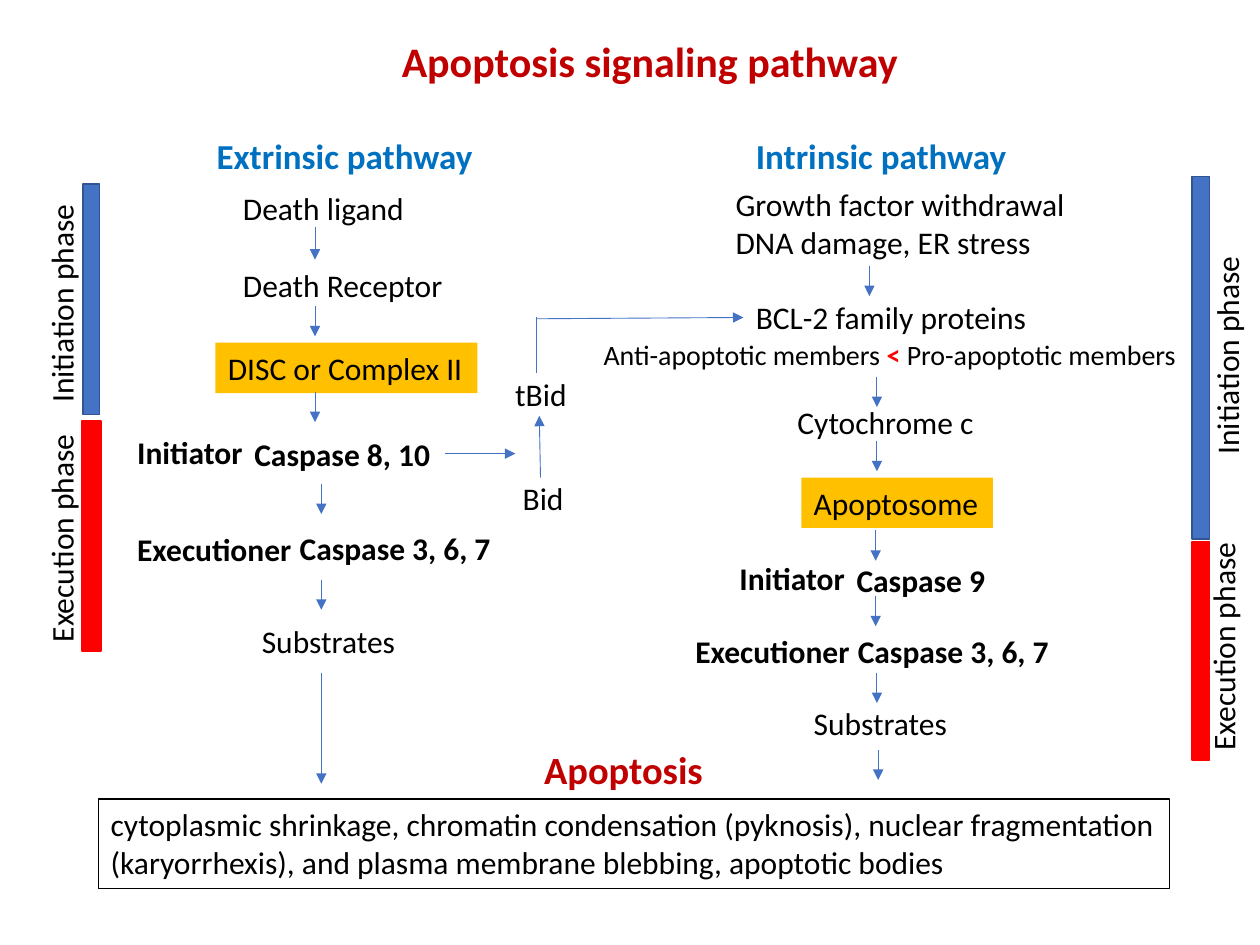
from typing import NamedTuple, Optional

from pptx import Presentation
from pptx.dml.color import RGBColor
from pptx.enum import shapes, text
from pptx.oxml import parse_xml
from pptx.oxml.ns import nsdecls, qn
from pptx.util import Inches, Pt

COLOURS = {
    "black": "000000", "title": "C00000", "heading": "0070C0", "blue": "4472C4",
    "navy": "325491", "red": "FF0000", "amber": "FFC000",
}


class Run(NamedTuple):
    words: str
    colour: str = "black"
    bold: bool = False


class Label(NamedTuple):
    words: str
    left: float
    top: float
    width: float
    height: float = 0.4
    size: int = 18
    colour: str = "black"
    bold: bool = False
    fill: Optional[str] = None
    outline: Optional[str] = None
    wrap: bool = False
    rotation: int = 0
    margin: Optional[float] = None
    runs: tuple = ()


class Arrow(NamedTuple):
    x: float
    y: float
    end_x: float
    end_y: float
    head: bool = True


class Bar(NamedTuple):
    left: float
    top: float
    width: float
    height: float
    fill: str
    outline: str


def rgb(name: str) -> RGBColor:
    """Return the named colour."""
    return RGBColor.from_string(COLOURS[name])


def down(x: float, y: float, length: float = 0.24) -> Arrow:
    """Describe an arrow pointing straight down."""
    return Arrow(x, y, x, y + length)


def draw_label(slide, label: Label):
    """Draw a text label, one paragraph per line of words."""
    box = slide.shapes.add_textbox(*map(Inches, label[1:5]))
    box.rotation = label.rotation
    if label.fill:
        box.fill.solid()
        box.fill.fore_color.rgb = rgb(label.fill)
    if label.outline:
        box.line.color.rgb = rgb(label.outline)
        box.line.width = Pt(0.75)
    frame = box.text_frame
    frame.word_wrap = label.wrap
    frame.auto_size = text.MSO_AUTO_SIZE.SHAPE_TO_FIT_TEXT
    if label.margin is not None:
        frame.margin_left = frame.margin_right = Inches(label.margin)
        frame.margin_top = frame.margin_bottom = Inches(label.margin)
    for index, line in enumerate(label.words.split("\n")):
        paragraph = frame.add_paragraph() if index else frame.paragraphs[0]
        for part in label.runs or (Run(line, label.colour, label.bold),):
            run = paragraph.add_run()
            run.text = part.words
            run.font.name = "Calibri"
            run.font.size = Pt(label.size)
            run.font.bold = part.bold
            run.font.color.rgb = rgb(part.colour)
    return box


def draw_arrow(slide, arrow: Arrow):
    """Draw a thin blue connector, with a head unless it is a plain line."""
    link = slide.shapes.add_connector(
        shapes.MSO_CONNECTOR.STRAIGHT, *map(Inches, arrow[:4]))
    link.line.color.rgb = rgb("blue")
    link.line.width = Pt(0.5)
    if arrow.head:
        link.line._get_or_add_ln().append(
            parse_xml(f'<a:tailEnd {nsdecls("a")} type="triangle"/>'))
    properties = link._element.find(qn("p:spPr"))
    properties.append(parse_xml(f'<a:effectLst {nsdecls("a")}/>'))
    return link


def draw_bar(slide, bar: Bar) -> None:
    """Draw the bar that spans one phase."""
    shape = slide.shapes.add_shape(
        shapes.MSO_SHAPE.RECTANGLE, *map(Inches, bar[:4]))
    shape.shadow.inherit = False
    shape.fill.solid()
    shape.fill.fore_color.rgb = rgb(bar.fill)
    shape.line.color.rgb = rgb(bar.outline)
    shape.line.width = Pt(1)


BALANCE = (Run("Anti-apoptotic members "), Run("<", "red", True),
           Run(" Pro-apoptotic members"))
OUTCOME = ("cytoplasmic shrinkage, chromatin condensation (pyknosis), nuclear "
           "fragmentation (karyorrhexis), and plasma membrane blebbing, "
           "apoptotic bodies")
CASPASE_8 = Label("Caspase 8, 10", 1.92, 3.4, 1.61, bold=True)
BCL_2 = Label("BCL-2 family proteins", 5.9, 2.32, 2.37)

LABELS = [
    Label("Apoptosis signaling pathway", 3.09, 0.23, 4.18, 0.5, 24, "title", True),
    Label("Extrinsic pathway", 1.62, 1.02, 2.25, 0.44, 20, "heading", True),
    Label("Death ligand", 1.83, 1.45, 1.5),
    Label("Death Receptor", 1.83, 2.06, 1.8),
    Label("DISC or Complex II", 1.71, 2.72, 2.08, fill="amber"),
    Label("Initiator", 0.99, 3.39, 1.05, bold=True),
    Label("Executioner", 0.99, 4.16, 1.44, bold=True),
    Label("Caspase 3, 6, 7", 2.28, 4.15, 1.73, bold=True),
    Label("Substrates", 1.98, 4.89, 1.27),
    Label("Bid", 4.05, 3.75, 0.53),
    Label("tBid", 3.99, 2.93, 0.61),
    Label("Intrinsic pathway", 5.9, 1.02, 2.21, 0.44, 20, "heading", True),
    Label("Growth factor withdrawal\nDNA damage, ER stress",
          5.74, 1.42, 2.96, 0.71, wrap=True),
    Label("", 4.79, 2.68, 4.6, 0.27, 16, margin=0, runs=BALANCE),
    Label("Cytochrome c", 6.23, 3.15, 1.62),
    Label("Apoptosome", 6.36, 3.79, 1.52, fill="amber"),
    Label("Initiator", 5.77, 4.39, 1.05, bold=True),
    Label("Caspase 9", 6.7, 4.4, 1.23, bold=True),
    Label("Executioner", 5.42, 4.97, 1.44, bold=True),
    Label("Caspase 3, 6, 7", 6.71, 4.97, 1.73, bold=True),
    Label("Substrates", 6.36, 5.54, 1.27),
    Label("Apoptosis", 4.22, 5.87, 1.48, 0.47, 22, "title", True),
    Label(OUTCOME, 0.78, 6.34, 8.5, 0.71, outline="black", wrap=True),
    Label("Initiation phase", -0.41, 2.2, 1.79, rotation=270),
    Label("Execution phase", -0.45, 4.06, 1.87, rotation=270),
    Label("Initiation phase", 8.84, 2.61, 1.79, rotation=270),
    Label("Execution phase", 8.77, 4.92, 1.87, rotation=270),
]

ARROWS = [
    down(2.5, 1.8, 0.26), down(2.5, 2.43), down(2.5, 3.11),
    down(2.55, 3.84), down(2.55, 4.6), down(2.55, 5.34, 0.88),
    down(6.9, 2.11), down(6.96, 2.99), down(6.96, 3.5), down(6.95, 4.21),
    down(6.95, 4.73), down(6.96, 5.34), down(6.97, 5.95),
    Arrow(4.29, 3.79, 4.28, 3.3),
    Arrow(4.26, 2.96, 4.26, 2.52, head=False),
]

BARS = [
    Bar(0.66, 1.46, 0.13, 1.83, "blue", "navy"),
    Bar(0.65, 3.34, 0.15, 1.83, "red", "red"),
    Bar(9.46, 1.4, 0.14, 2.88, "blue", "navy"),
    Bar(9.46, 4.3, 0.14, 1.73, "red", "red"),
]


def main() -> None:
    """Build the apoptosis pathway slide."""
    deck = Presentation()
    deck.slide_width, deck.slide_height = Inches(10), Inches(7.5)
    slide = deck.slides.add_slide(deck.slide_layouts[6])
    for bar in BARS:
        draw_bar(slide, bar)
    for label in LABELS:
        draw_label(slide, label)
    caspase_8 = draw_label(slide, CASPASE_8)
    bcl_2 = draw_label(slide, BCL_2)
    for arrow in ARROWS:
        draw_arrow(slide, arrow)
    draw_arrow(slide, Arrow(3.53, 3.6, 4.09, 3.6)).begin_connect(caspase_8, 3)
    draw_arrow(slide, Arrow(4.26, 2.53, 5.9, 2.52)).end_connect(bcl_2, 1)
    deck.save("out.pptx")


if __name__ == "__main__":
    main()
